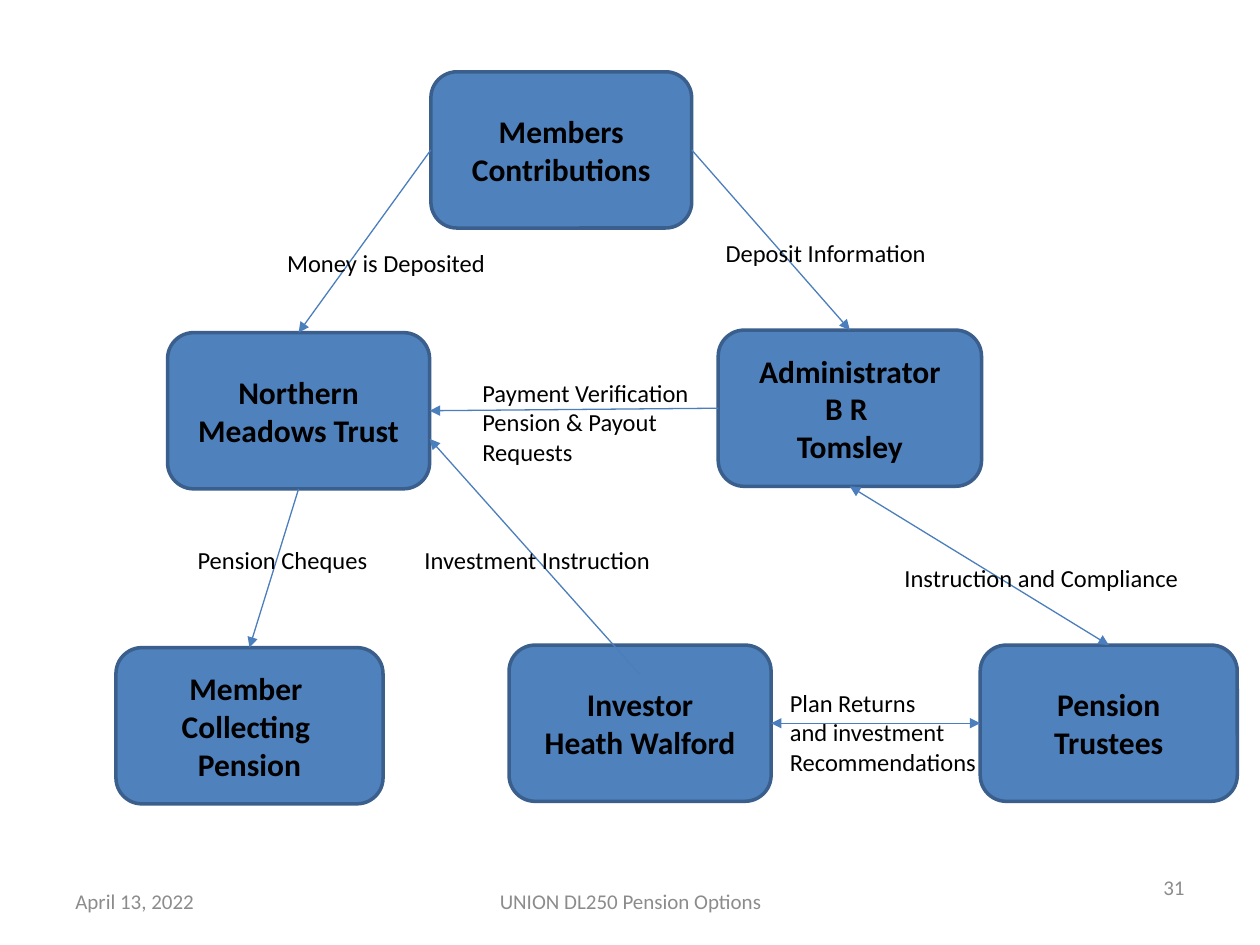
from lxml.etree import SubElement
from pptx import Presentation
from pptx.dml.color import RGBColor
from pptx.enum.shapes import MSO_CONNECTOR as Connector, MSO_SHAPE as Shape
from pptx.enum.text import MSO_ANCHOR as Anchor, PP_ALIGN as Align
from pptx.oxml.ns import qn
from pptx.util import Inches, Pt

FONT = "Calibri"
BLACK, GREY = "000000", "8C8C8C"
BOX_FILL, BOX_LINE, ARROW = "4F81BD", "3A5F8C", "4B7EBC"
BOX_HEIGHT = 1.24
LABEL_LINE, LABEL_PADDING = 0.235, 0.1

# name: (left, top, width, lines)
BOXES = {
    "members": (3.42, 0.57, 2.07, ["Members Contributions"]),
    "trustees": (7.78, 5.12, 2.04, ["Pension Trustees"]),
    "investor": (4.04, 5.12, 2.08, ["Investor", "Heath Walford"]),
    "administrator": (5.70, 2.62, 2.09, ["Administrator", "B R ", "Tomsley"]),
    "trust": (1.33, 2.64, 2.08, ["Northern Meadows Trust"]),
    "collecting": (0.92, 5.14, 2.12, ["Member ", "Collecting ", "Pension"]),
}

# Points on a box as shares of its width and height
TOP, LEFT, BOTTOM, RIGHT = (0.5, 0), (0, 0.5), (0.5, 1), (1, 0.5)
SITES = [TOP, LEFT, BOTTOM, RIGHT]  # in connection site order

# (start box, point, end box, point, arrowhead at both ends)
LINKS = [
    ("members", LEFT, "trust", TOP, False),
    ("members", RIGHT, "administrator", TOP, False),
    ("administrator", LEFT, "trust", RIGHT, False),
    ("trustees", LEFT, "investor", RIGHT, True),
    ("trust", BOTTOM, "collecting", TOP, False),
    ("trustees", TOP, "administrator", BOTTOM, True),
    ("investor", (0.5, 0.19), "trust", (1, 0.68), False),
]

# (left, top, width, lines)
LABELS = [
    (2.18, 1.92, 1.79, ["Money is Deposited"]),
    (5.66, 1.84, 1.85, ["Deposit Information"]),
    (3.73, 2.95, 1.86, ["Payment Verification", "Pension & Payout", "Requests"]),
    (7.08, 4.42, 2.44, ["Instruction and Compliance"]),
    (6.17, 5.41, 1.74, ["Plan Returns", "and investment", "Recommendations"]),
    (3.27, 4.28, 2.01, ["Investment Instruction"]),
    (1.47, 4.28, 1.56, ["Pension Cheques"]),
]

# (left, top, width, text, alignment)
FOOTERS = [
    (0.50, 6.95, 2.33, "April 13, 2022", Align.LEFT),
    (3.42, 6.95, 3.17, "UNION DL250 Pension Options", Align.CENTER),
    (7.17, 6.84, 2.33, "31", Align.RIGHT),
]


def rgb(color):
    return RGBColor.from_string(color)


def write(shape, lines, size, color, align, anchor, bold=False, wrap=True):
    frame = shape.text_frame
    frame.word_wrap = wrap
    frame.vertical_anchor = anchor
    for index, line in enumerate(lines):
        para = frame.add_paragraph() if index else frame.paragraphs[0]
        para.alignment = align
        span = para.add_run()
        span.text = line
        span.font.name, span.font.size, span.font.bold = FONT, Pt(size), bold
        span.font.color.rgb = rgb(color)


def add_box(page, left, top, width, lines):
    box = page.shapes.add_shape(
        Shape.ROUNDED_RECTANGLE, *map(Inches, (left, top, width, BOX_HEIGHT)))
    box.shadow.inherit = False
    box.fill.solid()
    box.fill.fore_color.rgb = rgb(BOX_FILL)
    box.line.color.rgb = rgb(BOX_LINE)
    box.line.width = Pt(2)
    write(box, lines, 18, BLACK, Align.CENTER, Anchor.MIDDLE, bold=True)
    return box


def point_on(box, point):
    across, down = point
    return int(box.left + across * box.width), int(box.top + down * box.height)


def add_arrow(page, start, start_point, end, end_point, both):
    """Draw an arrow, glued to the boxes where a point is a connection site."""
    arrow = page.shapes.add_connector(
        Connector.STRAIGHT, *point_on(start, start_point), *point_on(end, end_point))
    if start_point in SITES:
        arrow.begin_connect(start, SITES.index(start_point))
    if end_point in SITES:
        arrow.end_connect(end, SITES.index(end_point))
    arrow.line.color.rgb = rgb(ARROW)
    arrow.line.width = Pt(0.75)
    line = arrow.line._get_or_add_ln()
    for end_tag in ["a:headEnd", "a:tailEnd"] if both else ["a:tailEnd"]:
        SubElement(line, qn(end_tag), type="triangle")
    SubElement(arrow._element.spPr, qn("a:effectLst"))


def add_text(page, left, top, width, height, *style, **options):
    box = page.shapes.add_textbox(*map(Inches, (left, top, width, height)))
    write(box, *style, **options)


def main():
    deck = Presentation()
    deck.slide_width, deck.slide_height = Inches(10), Inches(7.5)
    page = deck.slides.add_slide(deck.slide_layouts[6])

    for left, top, width, text, align in FOOTERS:
        add_text(page, left, top, width, 0.4, [text], 12, GREY, align, Anchor.MIDDLE)
    boxes = {name: add_box(page, *box) for name, box in BOXES.items()}
    for start, start_point, end, end_point, both in LINKS:
        add_arrow(page, boxes[start], start_point, boxes[end], end_point, both)
    for left, top, width, lines in LABELS:
        height = LABEL_PADDING + LABEL_LINE * len(lines)
        add_text(page, left, top, width, height, lines, 14, BLACK,
                 Align.LEFT, Anchor.TOP, wrap=False)

    deck.save("out.pptx")


if __name__ == "__main__":
    main()
